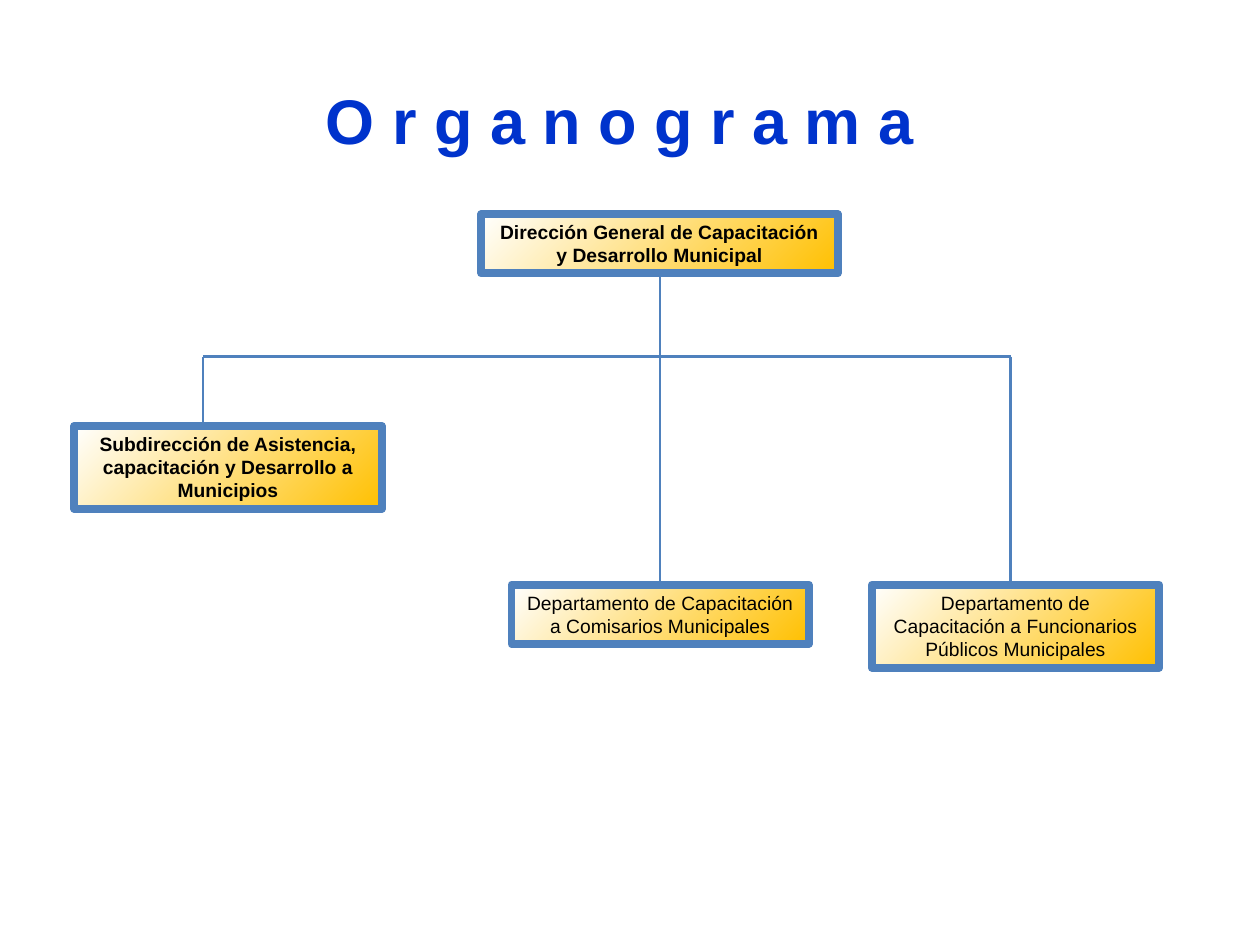
from collections import namedtuple

from lxml import etree
from pptx import Presentation
from pptx.dml.color import RGBColor
from pptx.enum.shapes import MSO_CONNECTOR, MSO_SHAPE
from pptx.enum.text import MSO_ANCHOR, MSO_AUTO_SIZE, PP_ALIGN
from pptx.oxml.ns import qn
from pptx.util import Inches, Pt

RECTANGLE = MSO_SHAPE.RECTANGLE
STRAIGHT = MSO_CONNECTOR.STRAIGHT
CENTER = PP_ALIGN.CENTER
TOP = MSO_ANCHOR.TOP
GROW = MSO_AUTO_SIZE.SHAPE_TO_FIT_TEXT
BLUE, WHITE, GOLD, BLACK, TITLE_BLUE = "4F81BD", "FFFFFF", "FFC000", "000000", "0033CC"

Box = namedtuple("Box", "left top width height")
Unit = namedtuple("Unit", "text area stem bold")

TITLE_AREA = Box(24.8, 8, 48.8, 9.47)
CHART_AREA = Box(5.9, 22.67, 86.1, 48)
BUS_ROW = 31.39
ROOT = Unit("Dirección General de Capacitación y Desarrollo Municipal",
            Box(37.51, 0, 32.87, 13.06), 53.95, True)
BRANCHES = [
    Unit("Subdirección de Asistencia, capacitación y Desarrollo a Municipios",
         Box(0, 46.67, 28.34, 18.33), 11.85, True),
    Unit("Departamento de Capacitación a Comisarios Municipales",
         Box(40.3, 81.67, 27.41, 13.06), 53.95, False),
    Unit("Departamento de Capacitación a Funcionarios Públicos Municipales",
         Box(73.52, 81.67, 26.48, 18.33), 86.3, False),
]


def color(value):
    """Turn a hex string into a colour."""
    return RGBColor.from_string(value)


def place(region, area):
    """Return the box that an area in percent takes up in a region."""
    return Box(round(region.left + region.width * area.left / 100),
               round(region.top + region.height * area.top / 100),
               round(region.width * area.width / 100),
               round(region.height * area.height / 100))


def write(shape, text, size, font_color, bold):
    """Put centred text into a shape."""
    frame = shape.text_frame
    frame.text = text
    frame.word_wrap = True
    frame.auto_size = GROW
    frame.vertical_anchor = TOP
    para = frame.paragraphs[0]
    para.alignment = CENTER
    font = para.runs[0].font
    font.name, font.size, font.bold = "Arial", Pt(size), bold
    font.color.rgb = color(font_color)


def add_title(page, box):
    """Add the slide title in its box."""
    write(page.shapes.add_textbox(*box), "O r g a n o g r a m a", 36, TITLE_BLUE, True)


def add_line(page, region, start, end):
    """Join two points given in percent of a region."""
    first, last = (place(region, Box(*point, 0, 0)) for point in (start, end))
    line = page.shapes.add_connector(STRAIGHT, first.left, first.top, last.left, last.top)
    line.line.color.rgb = color(BLUE)
    line.line.width = Pt(1.25)
    etree.SubElement(line.element.spPr, qn("a:effectLst"))


def add_unit(page, region, unit):
    """Add one unit of the organisation as a gradient rectangle."""
    shape = page.shapes.add_shape(RECTANGLE, *place(region, unit.area))
    shape.shadow.inherit = False
    shape.fill.gradient()
    shape.fill.gradient_angle = 315
    for stop, position, value in zip(shape.fill.gradient_stops, (0, 1), (WHITE, GOLD)):
        stop.position = position
        stop.color.rgb = color(value)
    shape.line.color.rgb = color(BLUE)
    shape.line.width = Pt(4.5)
    write(shape, unit.text, 11, BLACK, unit.bold)


def add_chart_tree(page, region):
    """Add the units and the lines between them."""
    add_line(page, region, (ROOT.stem, ROOT.area.height), (ROOT.stem, BUS_ROW))
    add_line(page, region, (BRANCHES[0].stem, BUS_ROW), (BRANCHES[-1].stem, BUS_ROW))
    for branch in BRANCHES:
        add_line(page, region, (branch.stem, BUS_ROW), (branch.stem, branch.area.top))
    for unit in [ROOT, *BRANCHES]:
        add_unit(page, region, unit)


def main():
    """Build and save the deck."""
    deck = Presentation()
    deck.slide_width, deck.slide_height = Inches(10), Inches(7.5)
    page = deck.slides.add_slide(deck.slide_layouts[6])
    whole = Box(0, 0, deck.slide_width, deck.slide_height)
    add_title(page, place(whole, TITLE_AREA))
    add_chart_tree(page, place(whole, CHART_AREA))
    deck.save("out.pptx")


if __name__ == "__main__":
    main()
